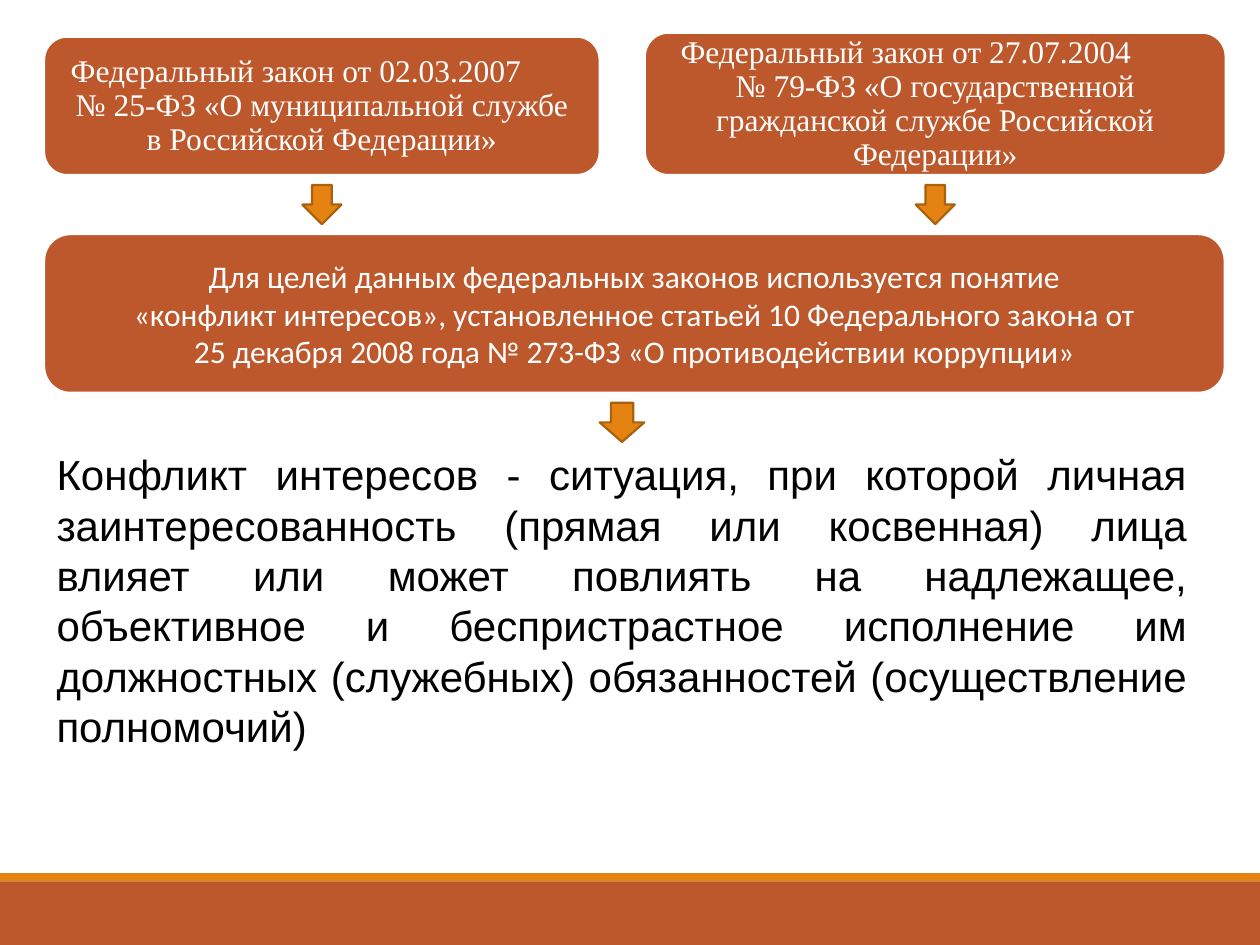
from pptx import Presentation
from pptx.dml.color import RGBColor
from pptx.enum.shapes import MSO_SHAPE
from pptx.enum.text import MSO_ANCHOR, PP_ALIGN
from pptx.util import Cm, Pt

RUST = RGBColor(0xBD, 0x58, 0x2C)
ORANGE = RGBColor(0xE4, 0x83, 0x12)
BROWN = RGBColor(0xA9, 0x61, 0x0D)
WHITE = RGBColor(0xFF, 0xFF, 0xFF)
BLACK = RGBColor(0, 0, 0)

RECTANGLE = MSO_SHAPE.RECTANGLE
ROUNDED = MSO_SHAPE.ROUNDED_RECTANGLE
DOWN_ARROW = MSO_SHAPE.DOWN_ARROW
MIDDLE = MSO_ANCHOR.MIDDLE
LEFT, CENTER, JUSTIFY = PP_ALIGN.LEFT, PP_ALIGN.CENTER, PP_ALIGN.JUSTIFY

SLIDE_WIDTH, SLIDE_HEIGHT = 25.4, 19.05
ARROW_HEIGHT = 0.79

FOOTER = (0, 17.6, SLIDE_WIDTH, 1.45)
MUNICIPAL_BOX = (0.89, 0.74, 11.2, 2.79)
CIVIL_BOX = (13.0, 0.66, 11.71, 2.87)
CONCEPT_BOX = (0.89, 4.72, 23.8, 3.2)
DEFINITION_BOX = (0.89, 8.92, 23.29, 6.4)


def add_filled(slide, kind, box, fill, line=None):
    shape = slide.shapes.add_shape(kind, *(Cm(length) for length in box))
    shape.shadow.inherit = False
    shape.fill.solid()
    shape.fill.fore_color.rgb = fill
    if line is None:
        shape.line.fill.background()
    else:
        shape.line.color.rgb = line
        shape.line.width = Pt(1.25)
    return shape


def format_text(frame, font, size, color, alignment):
    frame.word_wrap = True
    for paragraph in frame.paragraphs:
        paragraph.alignment = alignment
        for run in paragraph.runs:
            run.font.name = font
            run.font.size = Pt(size)
            run.font.color.rgb = color


def add_panel(slide, box, text, font, side_inset):
    panel = add_filled(slide, ROUNDED, box, RUST, WHITE)
    frame = panel.text_frame
    frame.text = text
    frame.vertical_anchor = MIDDLE
    frame.margin_left = frame.margin_right = Cm(side_inset)
    frame.margin_top = frame.margin_bottom = Cm(0.1)
    format_text(frame, font, 18, WHITE, CENTER)
    return frame


def add_law(slide, box, date_line, title, side_inset):
    """A law's panel: the date line starts at the left, the title is centred."""
    frame = add_panel(slide, box, f"{date_line}\n{title}",
                      "Times New Roman", side_inset)
    date_paragraph, title_paragraph = frame.paragraphs
    date_paragraph.alignment = LEFT
    for paragraph in frame.paragraphs:
        paragraph.line_spacing = 0.9
    title_paragraph.space_after = Pt(6.3)


def add_arrow_below(slide, box, center, width=ARROW_HEIGHT):
    _, top, _, height = box
    arrow_box = (center - width / 2, top + height + 0.2, width, ARROW_HEIGHT)
    add_filled(slide, DOWN_ARROW, arrow_box, ORANGE, BROWN)


def add_definition(slide, box, text):
    definition = slide.shapes.add_textbox(*(Cm(length) for length in box))
    definition.text_frame.text = text
    format_text(definition.text_frame, "Arial", 24, BLACK, JUSTIFY)


def add_footer(slide, box):
    left, top, width, height = box
    stripe = 0.17
    add_filled(slide, RECTANGLE, (left, top, width, stripe), ORANGE)
    add_filled(slide, RECTANGLE,
               (left, top + stripe, width, height - stripe), RUST)


def main():
    presentation = Presentation()
    presentation.slide_width = Cm(SLIDE_WIDTH)
    presentation.slide_height = Cm(SLIDE_HEIGHT)
    slide = presentation.slides.add_slide(presentation.slide_layouts[6])

    add_footer(slide, FOOTER)
    add_law(slide, MUNICIPAL_BOX, "Федеральный закон от 02.03.2007",
            "№ 25-ФЗ «О муниципальной службе в Российской Федерации»", 0.4)
    add_law(slide, CIVIL_BOX, "Федеральный закон от 27.07.2004",
            "№ 79-ФЗ «О государственной гражданской службе "
            "Российской Федерации»", 0.58)
    add_panel(slide, CONCEPT_BOX,
              "Для целей данных федеральных законов используется понятие\v"
              "«конфликт интересов», установленное статьей 10 "
              "Федерального закона от\v"
              "25 декабря 2008 года № 273-ФЗ «О противодействии коррупции»",
              "Calibri", 0.8)
    for box in (MUNICIPAL_BOX, CIVIL_BOX):
        add_arrow_below(slide, box, box[0] + box[2] / 2)
    add_arrow_below(slide, CONCEPT_BOX, 12.54, 0.9)
    add_definition(slide, DEFINITION_BOX,
                   "Конфликт интересов - ситуация, при которой личная "
                   "заинтересованность (прямая или косвенная) лица влияет или "
                   "может повлиять на надлежащее, объективное и "
                   "беспристрастное исполнение им должностных (служебных) "
                   "обязанностей (осуществление полномочий)")
    presentation.save("out.pptx")


if __name__ == "__main__":
    main()
